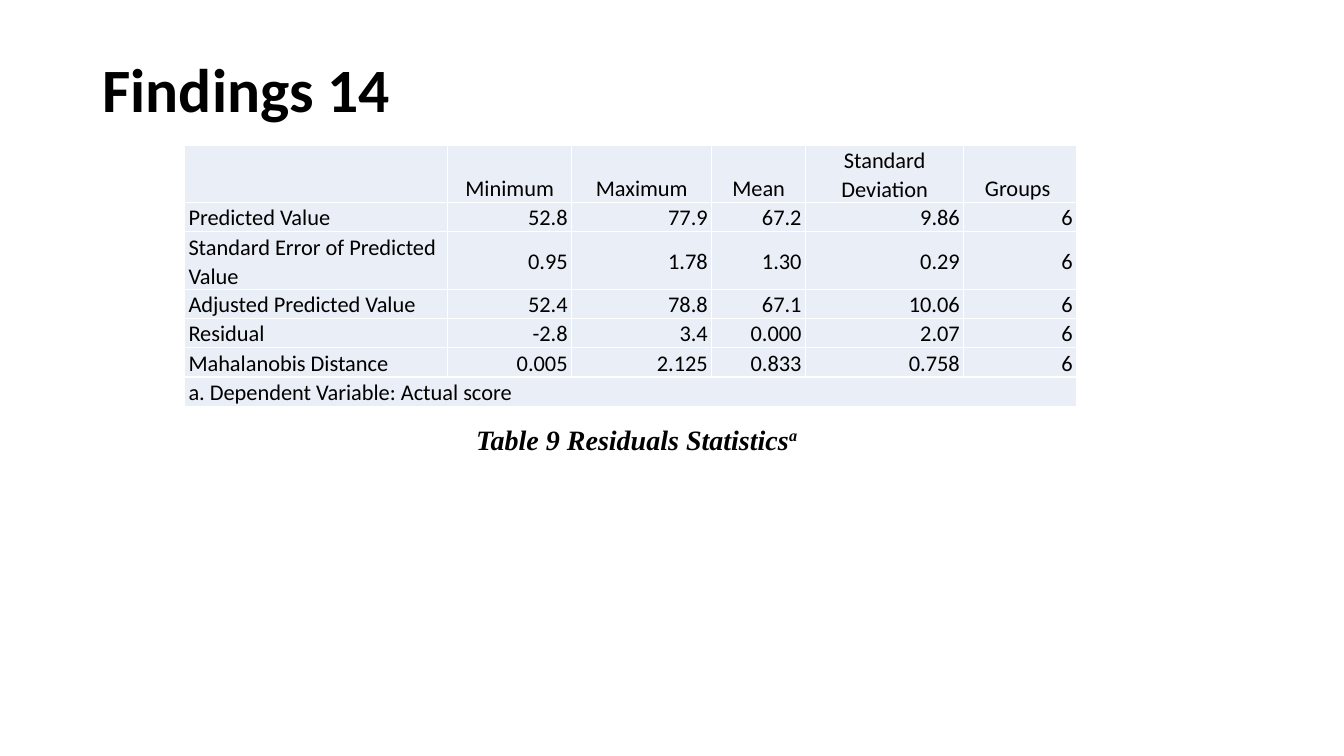
from lxml import etree
from pptx import Presentation
from pptx import util as u
from pptx.dml.color import RGBColor
from pptx.enum import text
from pptx.oxml import ns

COLORS = {"ink": "000000", "cell": "EAEFF7", "border": "FFFFFF"}
COLUMN_WIDTHS = [2.61, 1.23, 1.39, 0.93, 1.57, 1.12]
HEADER_HEIGHT, ROW_HEIGHT = 0.56, 0.29
ROWS = [
    ["", "Minimum", "Maximum", "Mean", "Standard Deviation", "Groups "],
    ["Predicted Value", "52.8", "77.9", "67.2", "9.86", "6"],
    ["Standard Error of Predicted Value", "0.95", "1.78", "1.30", "0.29", "6"],
    ["Adjusted Predicted Value", "52.4", "78.8", "67.1", "10.06", "6"],
    ["Residual", "-2.8", "3.4", "0.000", "2.07", "6"],
    ["Mahalanobis Distance", "0.005", "2.125", "0.833", "0.758", "6"],
    ["a. Dependent Variable: Actual score"],
]


def style_font(font, name, size, bold=False, italic=False):
    font.name, font.size = name, u.Pt(size)
    font.bold, font.italic = bold, italic
    font.color.rgb = RGBColor.from_string(COLORS["ink"])


def add_text_box(page, box):
    frame = page.shapes.add_textbox(*map(u.Inches, box)).text_frame
    frame.word_wrap = True
    return frame


def add_title(page, box):
    frame = add_text_box(page, box)
    frame.vertical_anchor = text.MSO_ANCHOR.MIDDLE
    para = frame.paragraphs[0]
    para.text = "Findings 14"
    para.line_spacing = 0.9
    style_font(para.font, "Calibri", 44, bold=True)


def add_borders(cell):
    properties = cell._tc.get_or_add_tcPr()
    for side in ("lnL", "lnR", "lnT", "lnB"):
        line = etree.SubElement(properties, ns.qn(f"a:{side}"), w=str(u.Pt(1)))
        fill = etree.SubElement(line, ns.qn("a:solidFill"))
        etree.SubElement(fill, ns.qn("a:srgbClr"), val=COLORS["border"])


def style_cell(cell, is_header, is_label):
    add_borders(cell)
    cell.fill.solid()
    cell.fill.fore_color.rgb = RGBColor.from_string(COLORS["cell"])
    cell.margin_left = cell.margin_right = u.Inches(0.04)
    cell.margin_top = cell.margin_bottom = 0
    para = cell.text_frame.paragraphs[0]
    para.line_spacing = 1.07
    style_font(para.font, "Calibri", 16)
    if is_header:
        cell.vertical_anchor = text.MSO_ANCHOR.BOTTOM
        para.alignment = text.PP_ALIGN.CENTER
    elif is_label:
        cell.vertical_anchor = text.MSO_ANCHOR.TOP
        para.alignment = text.PP_ALIGN.LEFT
    else:
        cell.vertical_anchor = text.MSO_ANCHOR.MIDDLE
        para.alignment = text.PP_ALIGN.RIGHT


def add_residuals_table(page, box):
    table = page.shapes.add_table(
        len(ROWS), len(COLUMN_WIDTHS), *map(u.Inches, box)).table
    table.first_row = table.horz_banding = False
    for column, width in zip(table.columns, COLUMN_WIDTHS):
        column.width = u.Inches(width)
    for index, row in enumerate(table.rows):
        row.height = u.Inches(ROW_HEIGHT if index else HEADER_HEIGHT)
        for position, cell in enumerate(row.cells):
            if position < len(ROWS[index]):
                cell.text = ROWS[index][position]
            style_cell(cell, index == 0, position == 0)
    last = len(ROWS) - 1
    table.cell(last, 0).merge(table.cell(last, len(COLUMN_WIDTHS) - 1))


def add_caption(page, box):
    frame = add_text_box(page, box)
    para = frame.paragraphs[0]
    para.alignment = text.PP_ALIGN.CENTER
    para.space_after = u.Pt(10)
    style_font(para.font, "Times New Roman", 20, bold=True, italic=True)
    para.add_run().text = "Table 9 Residuals Statistics"
    mark = para.add_run()
    mark.text = "a"
    mark.font._element.set("baseline", "30000")


def main():
    deck = Presentation()
    deck.slide_width, deck.slide_height = u.Inches(13.33), u.Inches(7.5)
    page = deck.slides.add_slide(deck.slide_layouts[6])
    add_title(page, (0.92, 0.4, 11.5, 1.04))
    add_residuals_table(page, (1.83, 1.44, 8.85, 2.3))
    add_caption(page, (3.83, 4.14, 4.97, 0.44))
    deck.save("out.pptx")


if __name__ == "__main__":
    main()
